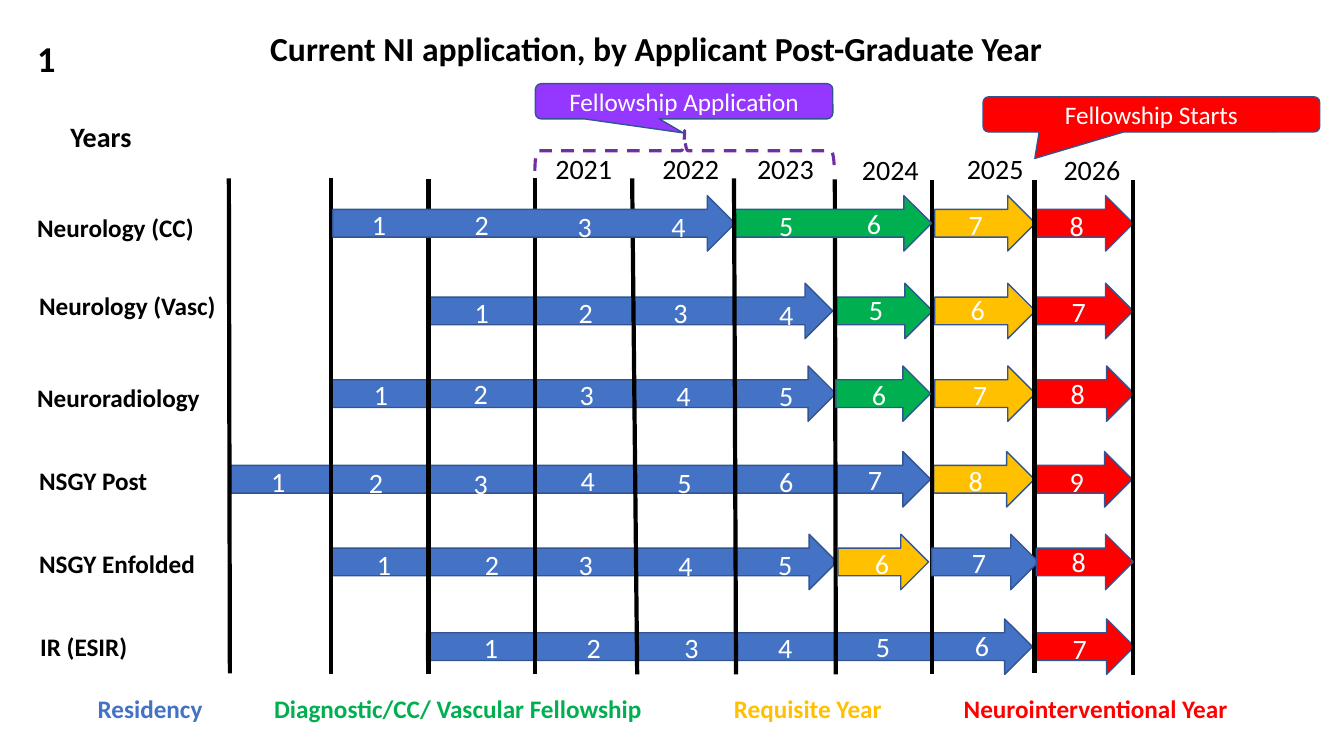
from pptx import Presentation
from pptx.dml.color import RGBColor
from pptx.enum.dml import MSO_LINE
from pptx.enum.shapes import MSO_CONNECTOR, MSO_SHAPE
from pptx.enum.text import MSO_ANCHOR, MSO_AUTO_SIZE, PP_ALIGN
from pptx.oxml.ns import qn
from pptx.util import Pt
from lxml.etree import SubElement

BLACK = RGBColor(0x00, 0x00, 0x00)
WHITE = RGBColor(0xFF, 0xFF, 0xFF)
BLUE = RGBColor(0x44, 0x72, 0xC4)
GREEN = RGBColor(0x00, 0xB0, 0x50)
GOLD = RGBColor(0xFF, 0xC0, 0x00)
RED = RGBColor(0xFF, 0x00, 0x00)
VIOLET = RGBColor(0x94, 0x37, 0xFF)
PURPLE = RGBColor(0x70, 0x30, 0xA0)
EDGE = RGBColor(0x32, 0x54, 0x91)

PX = 9144
FONT = "Calibri"
ARROW_H = 55

TITLE = "Current NI application, by Applicant Post-Graduate Year"
CALLOUTS = [
    ("Fellowship Starts", (975, 96, 334, 35), RED, (-0.346, 1.247, 0.167)),
    ("Fellowship Application", (531, 83, 295, 35), VIOLET, (-0.003, 0.895, 0.167)),
]
YEARS = [("2021", 541, 145), ("2022", 647, 145), ("2023", 741, 145),
         ("2024", 845, 146), ("2025", 949, 145), ("2026", 1045, 146)]
YEAR_LINES = [
    (227, 177, 228, 668), (328, 177, 328, 669), (425, 178, 425, 669),
    (531, 177, 531, 669), (627, 177, 632, 669), (828, 178, 829, 669),
    (924, 179, 924, 669), (1026, 179, 1026, 668), (1124, 179, 1124, 670),
]
FRONT_LINE = (728, 177, 730, 669)
LEGEND = [("Residency\t", BLUE), ("Diagnostic/CC/ Vascular Fellowship\t", GREEN),
          ("Requisite Year\t", GOLD), ("Neurointerventional Year", RED)]
LEGEND_TABS = [175, 631, 859]

# label, label position, arrow top, arrows behind lines, arrows before lines, numbers
TRACKS = [
    ("Neurology (CC)", (27, 206), 194,
     [(927, 100, GOLD), (1026, 98, RED)],
     [(330, 399, BLUE), (728, 196, GREEN)],
     [(359, 201), (461, 201), (563, 203), (656, 203),
      (763, 202), (850, 200), (951, 201), (1051, 202)]),
    ("Neurology (Vasc)", (29, 283), 281,
     [(927, 100, GOLD), (1026, 98, RED), (426, 400, BLUE), (830, 95, GREEN)],
     [],
     [(461, 288), (564, 288), (658, 288), (763, 290),
      (852, 285), (953, 285), (1053, 287)]),
    ("Neuroradiology", (27, 374), 363,
     [(927, 100, GOLD), (1027, 98, RED), (327, 502, BLUE)],
     [(829, 94, GREEN)],
     [(361, 370), (460, 369), (565, 370), (661, 371),
      (763, 371), (855, 370), (955, 370), (1052, 369)]),
    ("NSGY Post", (29, 457), 448,
     [(926, 100, GOLD), (1025, 98, RED), (228, 695, BLUE)],
     [],
     [(259, 456), (356, 457), (460, 458), (566, 455), (662, 457),
      (763, 456), (851, 454), (951, 455), (1051, 456)]),
    ("NSGY Enfolded", (29, 539), 530,
     [(328, 502, BLUE)],
     [(831, 90, GOLD), (924, 106, BLUE), (1028, 96, RED)],
     [(364, 538), (471, 538), (564, 538), (663, 539),
      (762, 538), (858, 537), (954, 536), (1053, 535)]),
    ("IR (ESIR)", (30, 621), 614,
     [(1025, 100, RED), (423, 601, BLUE)],
     [],
     [(470, 621), (572, 621), (669, 621), (762, 621),
      (859, 620), (957, 619), (1054, 622)]),
]


def px(*lengths):
    return [n * PX for n in lengths]


def add_run(p, text, size, color, bold=False):
    r = p.add_run()
    r.text = text
    r.font.name = FONT
    r.font.size = Pt(size)
    r.font.bold = bold
    r.font.color.rgb = color


def add_text(s, box, runs, size, bold=False):
    tf = s.shapes.add_textbox(*px(*box)).text_frame
    tf.word_wrap = True
    p = tf.paragraphs[0]
    for text, color in runs:
        add_run(p, text, size, color, bold)
    return p


def add_preset(s, kind, box, fill):
    sp = s.shapes.add_shape(kind, *px(*box))
    sp.shadow.inherit = False
    sp.fill.solid()
    sp.fill.fore_color.rgb = fill
    sp.line.color.rgb = EDGE
    sp.line.width = Pt(1)
    return sp


def add_arrows(s, arrows, top):
    for x, w, color in arrows:
        add_preset(s, MSO_SHAPE.RIGHT_ARROW, (x, top, w, ARROW_H), color)


def add_year_line(s, ends):
    c = s.shapes.add_connector(MSO_CONNECTOR.STRAIGHT, *px(*ends))
    c.line.color.rgb = BLACK
    c.line.width = Pt(3)
    SubElement(c._element.spPr, qn("a:effectLst"))


def add_callout(s, text, box, fill, adjustments):
    sp = add_preset(s, MSO_SHAPE.ROUNDED_RECTANGULAR_CALLOUT, box, fill)
    for i, value in enumerate(adjustments):
        sp.adjustments[i] = value
    tf = sp.text_frame
    tf.vertical_anchor = MSO_ANCHOR.MIDDLE
    p = tf.paragraphs[0]
    p.alignment = PP_ALIGN.CENTER
    add_run(p, text, 18, WHITE)


def add_title(s):
    sp = s.shapes.title
    sp.left, sp.top, sp.width, sp.height = px(258, 23, 794, 50)
    tf = sp.text_frame
    tf.auto_size = MSO_AUTO_SIZE.NONE
    tf.word_wrap = False
    tf.vertical_anchor = MSO_ANCHOR.TOP
    p = tf.paragraphs[0]
    p.alignment = PP_ALIGN.LEFT
    add_run(p, TITLE, 24, BLACK, True)


def add_brace(s):
    sp = add_preset(s, MSO_SHAPE.RIGHT_BRACE, (659, 1, 40, 297), WHITE)
    sp.rotation = 270
    sp.fill.background()
    sp.line.color.rgb = PURPLE
    sp.line.width = Pt(2.25)
    sp.line.dash_style = MSO_LINE.DASH


def main():
    prs = Presentation()
    prs.slide_width, prs.slide_height = px(1333, 750)
    s = prs.slides.add_slide(prs.slide_layouts[5])
    add_title(s)

    for _, _, top, behind, _, _ in TRACKS:
        add_arrows(s, behind, top)
    for ends in YEAR_LINES:
        add_year_line(s, ends)
    for _, _, top, _, before, _ in TRACKS:
        add_arrows(s, before, top)
    add_year_line(s, FRONT_LINE)

    for label, (x, y), _, _, _, numbers in TRACKS:
        add_text(s, (x, y, 196, 38), [(label, BLACK)], 18, True)
        for n, (nx, ny) in enumerate(numbers, 1):
            add_text(s, (nx, ny, 30, 41), [(str(n), WHITE)], 20)

    add_text(s, (27, 31, 48, 51), [("1", BLACK)], 26, True)
    add_text(s, (60, 114, 104, 41), [("Years", BLACK)], 20, True)
    for year, x, y in YEARS:
        add_text(s, (x, y, 89, 41), [(year, BLACK)], 20)

    p = add_text(s, (87, 683, 1204, 38), LEGEND, 18, True)
    tabs = SubElement(p._p.get_or_add_pPr(), qn("a:tabLst"))
    for pos in LEGEND_TABS:
        SubElement(tabs, qn("a:tab"), pos=str(pos * PX), algn="l")

    for callout in CALLOUTS:
        add_callout(s, *callout)
    add_brace(s)
    prs.save("out.pptx")


if __name__ == "__main__":
    main()
